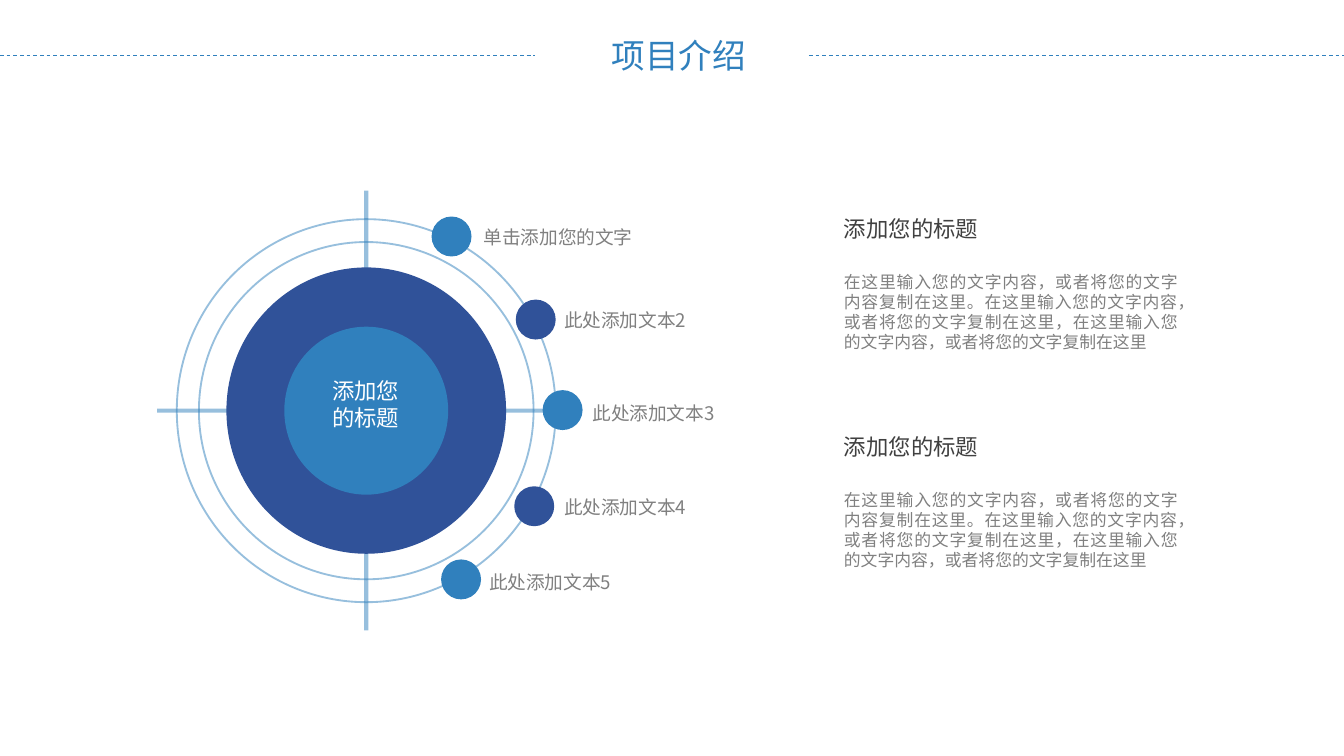
import pptx
import pptx.dml.color
import pptx.enum.dml
import pptx.enum.shapes
import pptx.enum.text
import pptx.oxml
import pptx.oxml.ns
import pptx.util

Pt = pptx.util.Pt
ALIGN = pptx.enum.text.PP_ALIGN
ANCHOR = pptx.enum.text.MSO_ANCHOR
COLORS = {"blue": "3080BD", "navy": "305299", "gray": "808080",
          "dark": "404040", "white": "FFFFFF"}
FONT = "Noto Sans CJK SC"
NAMESPACE = pptx.oxml.ns.nsdecls("a")


class SlideBuilder:
    """Holds the style and the slide being filled; lengths are in points."""

    def __init__(self, slide):
        self.slide = slide

    def paint(self, color_format, color):
        color_format.rgb = pptx.dml.color.RGBColor.from_string(COLORS[color])

    def stroke(self, shape, width, alpha=None):
        shape.line.width = Pt(width)
        shape.line.fill.solid()
        self.paint(shape.line.color, "blue")
        if alpha:
            color = shape.line._get_or_add_ln().find(".//" + pptx.oxml.ns.qn("a:srgbClr"))
            color.append(pptx.oxml.parse_xml(f'<a:alpha {NAMESPACE} val="{alpha * 1000}"/>'))

    def line(self, start, end, width, alpha=None, dashed=False):
        line = self.slide.shapes.add_connector(
            pptx.enum.shapes.MSO_CONNECTOR.STRAIGHT, *map(Pt, start + end))
        self.stroke(line, width, alpha)
        if dashed:
            line.line.dash_style = pptx.enum.dml.MSO_LINE.DASH
        line._element.spPr.append(pptx.oxml.parse_xml(f"<a:effectLst {NAMESPACE}/>"))

    def ellipse(self, center, width, height, fill=None):
        """Draws a filled disc, or a half-transparent ring when fill is None."""
        x, y = center
        shape = self.slide.shapes.add_shape(
            pptx.enum.shapes.MSO_SHAPE.OVAL,
            Pt(x - width / 2), Pt(y - height / 2), Pt(width), Pt(height))
        shape.shadow.inherit = False
        if fill:
            shape.fill.solid()
            self.paint(shape.fill.fore_color, fill)
            shape.line.fill.background()
        else:
            shape.fill.background()
            self.stroke(shape, 1, 50)

    def text(self, place, lines, size, color, align=ALIGN.LEFT,
             anchor=ANCHOR.TOP, insets=(5, 2.8), wrap=True):
        box = self.slide.shapes.add_textbox(*map(Pt, place))
        frame = box.text_frame
        frame.word_wrap = wrap
        frame.auto_size = pptx.enum.text.MSO_AUTO_SIZE.SHAPE_TO_FIT_TEXT
        frame.vertical_anchor = anchor
        frame.margin_left = frame.margin_right = Pt(insets[0])
        frame.margin_top = frame.margin_bottom = Pt(insets[1])
        for index, line in enumerate(lines):
            para = frame.add_paragraph() if index else frame.paragraphs[0]
            para.alignment = align
            span = para.add_run()
            span.text = line
            span.font.size = Pt(size)
            span.font.name = FONT
            self.paint(span.font.color, color)
            span.font._element.append(
                pptx.oxml.parse_xml(f'<a:ea {NAMESPACE} typeface="{FONT}"/>'))


def add_header(builder):
    builder.text((322.6, 15.8, 83.5, 27.4), ["项目介绍"], 18, "blue", wrap=False)
    for start, end in ((0, 286.6), (433.4, 720)):
        builder.line((start, 29.5), (end, 29.5), 0.5, dashed=True)


def add_target(builder):
    center = (196.2, 220)
    x, y = center
    builder.line((84.2, y), (308.2, y), 2.25, 50)
    builder.line((x, 102.2), (x, 337.8), 2.25, 50)
    for width, height, fill in ((179.3, 180.7, None), (203, 205.2, None),
                                (149.8, 153.4, "navy"), (87.8, 90, "blue")):
        builder.ellipse(center, width, height, fill)
    builder.text((160.6, 199.4, 70.6, 34.6), ["添加您", "的标题"], 12, "white", ALIGN.CENTER)


def add_orbit_items(builder):
    # dot centre, label left, label middle, label
    items = [((241.9, 126.7), 254.9, 127.1, "单击添加您的文字"),
             ((287, 171.2), 298, 171.7, "此处添加文本2"),
             ((301.4, 219.7), 313.2, 221.4, "此处添加文本3"),
             ((286.2, 271.2), 298, 271.8, "此处添加文本4"),
             ((247, 310.4), 257.8, 312.1, "此处添加文本5")]
    for index, (center, left, middle, label) in enumerate(items):
        for diameter in (21.4, 18):
            builder.ellipse(center, diameter, diameter, ("blue", "navy")[index % 2])
        builder.text((left, middle - 8.3, 131, 16.6), [label], 10, "gray",
                     anchor=ANCHOR.MIDDLE, insets=(4.2, 2.1))


def add_descriptions(builder):
    body = ("在这里输入您的文字内容，或者将您的文字内容复制在这里。"
            "在这里输入您的文字内容，或者将您的文字复制在这里，"
            "在这里输入您的文字内容，或者将您的文字复制在这里")
    for top in (112.5, 229.4):
        builder.text((447.1, top, 188.6, 20.2), ["添加您的标题"], 12, "dark")
        builder.text((447.1, top + 30, 188.6, 49), [body], 9, "gray", ALIGN.JUSTIFY)


def main():
    deck = pptx.Presentation()
    deck.slide_width, deck.slide_height = Pt(720), Pt(405)
    builder = SlideBuilder(deck.slides.add_slide(deck.slide_layouts[6]))
    add_header(builder)
    add_target(builder)
    add_orbit_items(builder)
    add_descriptions(builder)
    deck.save("out.pptx")


if __name__ == "__main__":
    main()
